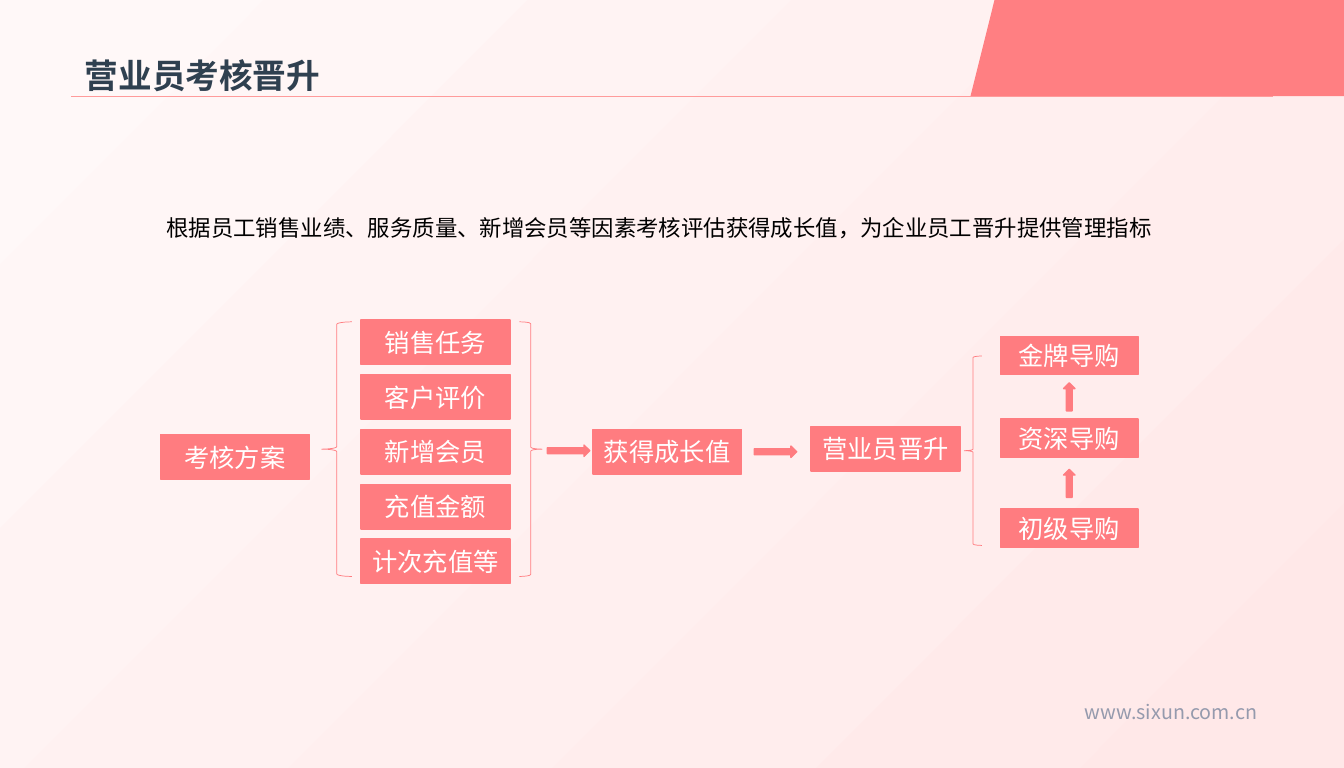
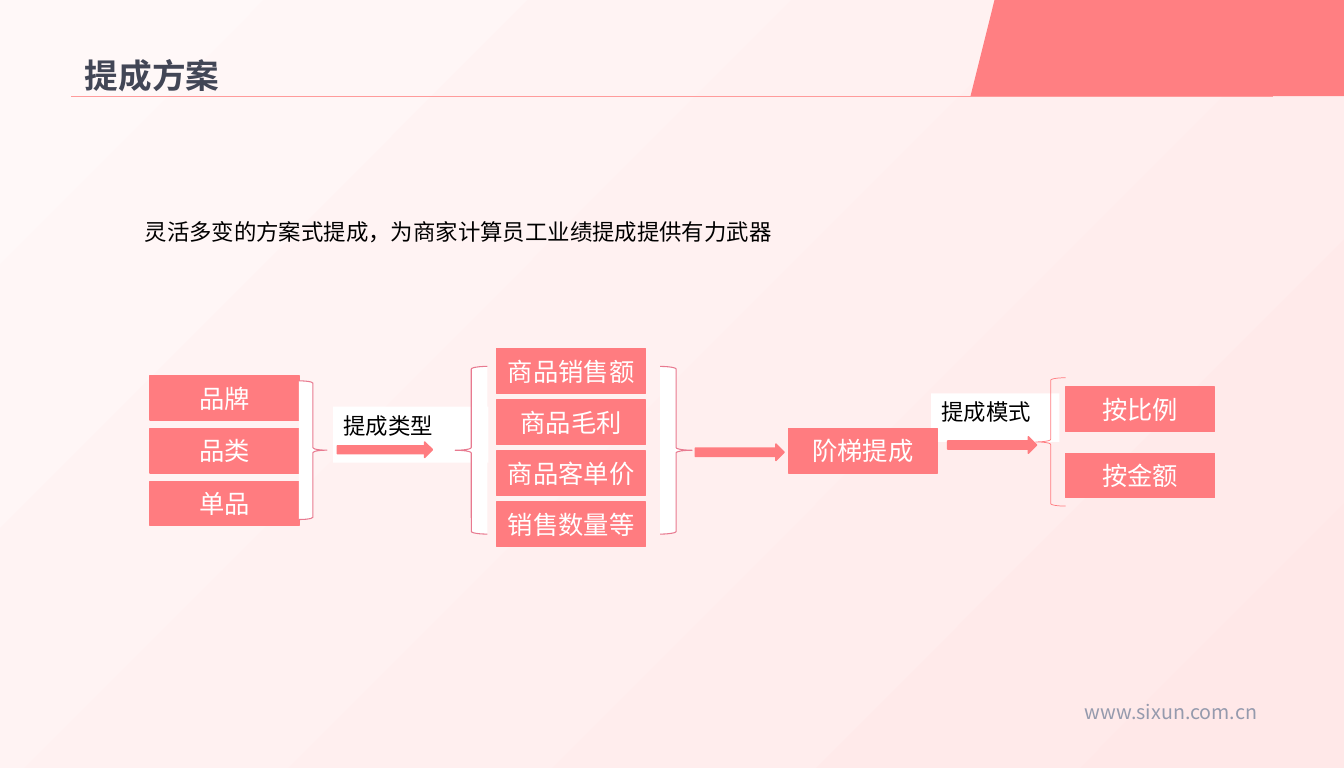
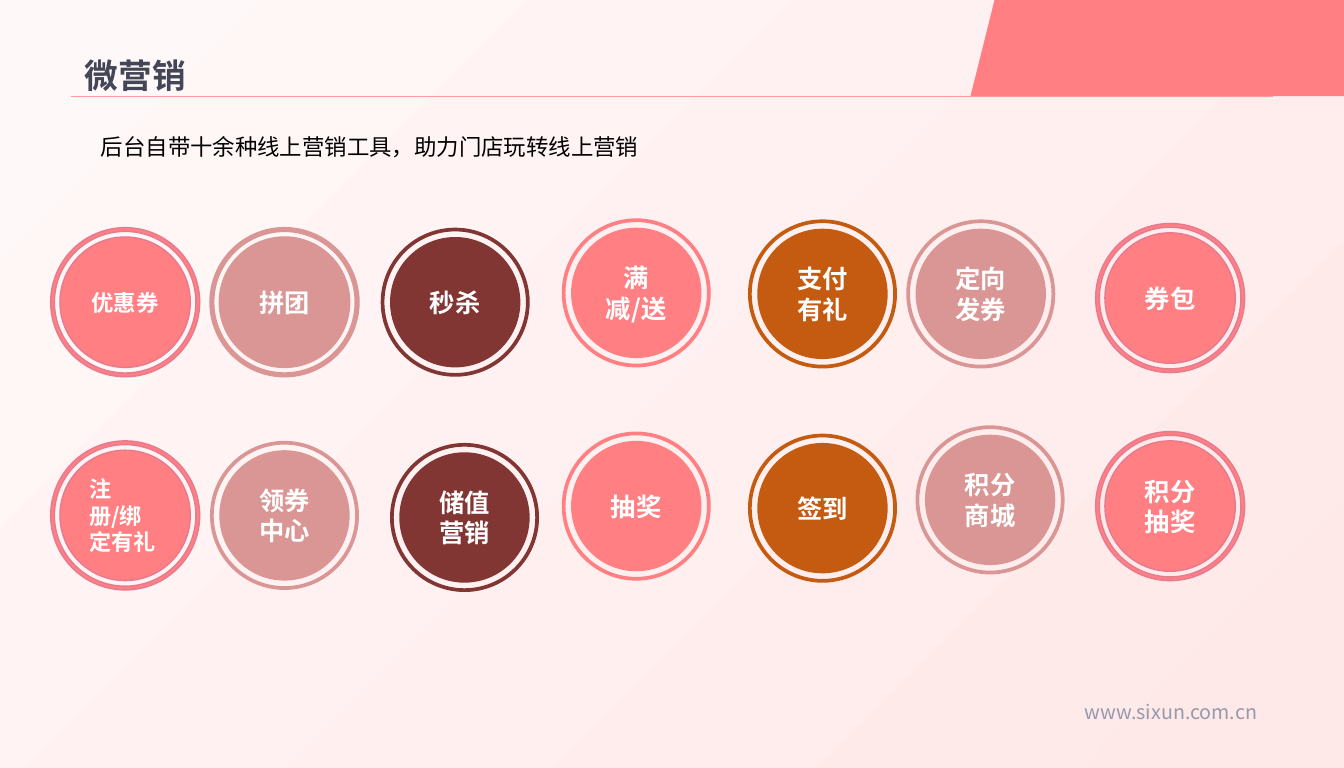
from dataclasses import dataclass

from lxml.etree import SubElement
from pptx import Presentation
from pptx.dml.color import RGBColor
from pptx.enum.lang import MSO_LANGUAGE_ID
from pptx.enum.shapes import MSO_CONNECTOR, MSO_SHAPE
from pptx.enum.text import MSO_ANCHOR, MSO_AUTO_SIZE, PP_ALIGN
from pptx.oxml.ns import qn
from pptx.util import Inches, Pt

# Shared look; every length is counted in grid units of a tenth of an inch
GRID = Inches(0.1)
PAGE_WIDTH, PAGE_HEIGHT = 129.9, 74.2
TILE_WIDTH, TILE_HEIGHT = 14.4, 4.3
HAN_FONT = "Noto Sans CJK SC"
COLORS = {
    "light": "FFF8F8", "blush": "FFE8E8", "band": "FF7F82", "rule": "FF9B9B",
    "tile": "FF7C80", "edge": "E87A90", "rose": "D99694", "wine": "823634",
    "rust": "C55A11", "navy": "2F4050", "slate": "424656", "footer": "959AAD",
    "white": "FFFFFF", "black": "000000",
}


@dataclass
class Box:
    left: float
    top: float
    width: float
    height: float

    def area(self, left, top, width=TILE_WIDTH, height=TILE_HEIGHT):
        """A box placed from this box's top left corner."""
        return Box(self.left + left, self.top + top, width, height)

    def emu(self):
        return [round(side * GRID) for side in (self.left, self.top, self.width, self.height)]


def rgb(name):
    return RGBColor.from_string(COLORS[name])


# Text and shape helpers
def write(shape, text, size, color, font=HAN_FONT, bold=False,
          align=PP_ALIGN.LEFT, anchor=MSO_ANCHOR.TOP, spacing=None):
    frame = shape.text_frame
    frame.text = text
    frame.word_wrap = True
    frame.auto_size = MSO_AUTO_SIZE.NONE
    frame.vertical_anchor = anchor
    for para in frame.paragraphs:
        para.alignment = align
        para.line_spacing = spacing
        for span in para.runs:
            span.font.size = Pt(size)
            span.font.bold = bold
            span.font.color.rgb = rgb(color)
            span.font.name = font
            span.font.language_id = MSO_LANGUAGE_ID.SIMPLIFIED_CHINESE
            SubElement(span.font._element, qn("a:ea")).set("typeface", HAN_FONT)


def add_text(page, box, text, size, color, **style):
    write(page.shapes.add_textbox(*box.emu()), text, size, color, **style)


def add_shape(owner, kind, box, fill=None, line=None, line_width=1):
    shape = owner.shapes.add_shape(kind, *box.emu())
    shape.shadow.inherit = False
    if fill:
        shape.fill.solid()
        shape.fill.fore_color.rgb = rgb(fill)
    else:
        shape.fill.background()
    if line:
        shape.line.color.rgb = rgb(line)
        shape.line.width = Pt(line_width)
    else:
        shape.line.fill.background()
    return shape


# Diagram parts
def add_tile(page, box, label):
    tile = add_shape(page, MSO_SHAPE.RECTANGLE, box, "tile", "tile")
    write(tile, label, 17.6, "white", "Cabin", align=PP_ALIGN.CENTER, anchor=MSO_ANCHOR.MIDDLE)


def add_stack(page, box, labels):
    """Tiles spread evenly from the top to the bottom of the box."""
    pitch = (box.height - TILE_HEIGHT) / (len(labels) - 1)
    for index, label in enumerate(labels):
        add_tile(page, box.area(0, index * pitch), label)


def add_ladder(page, box, steps, tile_height=3.7):
    """Tiles at given rows, with an upward arrow in the middle of each gap."""
    arrow_width, arrow_height = 1.1, 2.7
    previous_bottom = None
    for row, label in steps:
        add_tile(page, box.area(0, row, box.width, tile_height), label)
        if previous_bottom is not None:
            middle = (previous_bottom + row) / 2
            arrow = box.area((box.width - arrow_width) / 2, middle - arrow_height / 2,
                             arrow_width, arrow_height)
            add_shape(page, MSO_SHAPE.UP_ARROW, arrow, "tile", "tile")
        previous_bottom = row + tile_height


def add_arrow(page, box):
    add_shape(page, MSO_SHAPE.RIGHT_ARROW, box, "tile", "tile")


def add_brace(page, kind, box, filled=False):
    style = ("white", "edge", 0.75) if filled else (None, "tile", 0.5)
    add_shape(page, kind, box, *style)


def add_label(page, box, text):
    label = add_shape(page, MSO_SHAPE.RECTANGLE, box, "white")
    write(label, text, 15.6, "black", "Calibri", align=PP_ALIGN.JUSTIFY)


def add_badge(page, box, label, fill, edge=None, size=17.6, align=PP_ALIGN.CENTER):
    """A thin ring around a disc with a label."""
    inset = 0.9
    group = page.shapes.add_group_shape()
    ring = add_shape(group, MSO_SHAPE.DONUT, box, fill, edge)
    ring.adjustments[0] = 0.025
    disc_box = box.area(inset, inset, box.width - 2 * inset, box.height - 2 * inset)
    disc = add_shape(group, MSO_SHAPE.OVAL, disc_box, fill, edge)
    write(disc, label, size, "white", bold=True, align=align, anchor=MSO_ANCHOR.MIDDLE)


# Page frame: band, rule, footer and title
def set_background(master):
    fill = master.background.fill
    fill.gradient()
    fill.gradient_angle = 315
    for stop, name in zip(fill.gradient_stops, ("light", "blush")):
        stop.color.rgb = rgb(name)


def new_page(deck, title, title_color="slate"):
    page = deck.slides.add_slide(deck.slide_layouts[5])
    frame = Box(0, 0, PAGE_WIDTH, PAGE_HEIGHT)
    add_shape(page, MSO_SHAPE.PARALLELOGRAM, frame.area(93.8, 0, 39.1, 9.3), "band")
    add_text(page, frame.area(101, 67.1, 21.5, 3.3), "www.sixun.com.cn", 13.7, "footer",
             align=PP_ALIGN.RIGHT)
    left, top, width, _ = frame.area(6.9, 9.3, 116.1, 0).emu()
    rule = page.shapes.add_connector(MSO_CONNECTOR.STRAIGHT, left, top, left + width, top)
    rule.line.color.rgb = rgb("rule")
    rule.line.width = Pt(0.5)
    SubElement(rule._element.spPr, qn("a:effectLst"))
    heading = page.shapes.title
    heading.left, heading.top, heading.width, heading.height = frame.area(7.2, 3.4, 46.1, 6.3).emu()
    write(heading, title, 23.4, title_color, bold=True, anchor=MSO_ANCHOR.BOTTOM)
    return page


# Diagrams
def promotion_flow(page, box):
    add_tile(page, box.area(0, 11.1), "考核方案")
    add_brace(page, MSO_SHAPE.LEFT_BRACE, box.area(15.6, 0.2, 2.9, 24.6))
    add_stack(page, box.area(19.4, 0, height=box.height),
              ["销售任务", "客户评价", "新增会员", "充值金额", "计次充值等"])
    add_brace(page, MSO_SHAPE.RIGHT_BRACE, box.area(34.7, 0.2, 2.2, 24.6))
    add_arrow(page, box.area(37.4, 12.1, 4.1, 1.1))
    add_tile(page, box.area(41.8, 10.6), "获得成长值")
    add_arrow(page, box.area(57.4, 12.2, 4.1, 1.1))
    add_tile(page, box.area(62.9, 10.3), "营业员晋升")
    add_brace(page, MSO_SHAPE.LEFT_BRACE, box.area(77.7, 3.5, 1.7, 18.3))
    add_ladder(page, box.area(81.2, 1.6, 13.3, 20.4),
               [(0, "金牌导购"), (8, "资深导购"), (16.7, "初级导购")])


def commission_flow(page, box):
    add_label(page, box.area(17.7, 5.6, 15, 5.4), "提成类型")
    add_arrow(page, box.area(18.1, 9, 9.2, 1.5))
    add_label(page, box.area(75.5, 4.3, 12.4, 4.7), "提成模式")
    add_brace(page, MSO_SHAPE.LEFT_BRACE, box.area(85.6, 2.8, 2.9, 12.4))
    add_stack(page, box.area(0, 2.6, height=14.5), ["品牌", "品类", "单品"])
    add_brace(page, MSO_SHAPE.RIGHT_BRACE, box.area(14.4, 3.1, 2.7, 13.4), filled=True)
    add_brace(page, MSO_SHAPE.LEFT_BRACE, box.area(29.5, 1.7, 3.1, 16.2), filled=True)
    add_stack(page, box.area(33.5, 0, height=box.height),
              ["商品销售额", "商品毛利", "商品客单价", "销售数量等"])
    add_brace(page, MSO_SHAPE.RIGHT_BRACE, box.area(49.3, 1.7, 3.1, 16.2), filled=True)
    add_arrow(page, box.area(52.7, 9.2, 8.6, 1.6))
    add_tile(page, box.area(61.7, 7.7), "阶梯提成")
    add_arrow(page, box.area(77.1, 8.5, 8.6, 1.6))
    add_stack(page, box.area(88.5, 3.7, height=10.7), ["按比例", "按金额"])


def marketing_badges(page, box):
    diameter = 14.4
    badges = [  # left, top, label, fill, then edge, size and alignment where they differ
        (0, 0.9, "优惠券", "band", "edge", 15.6),
        (15.4, 0.9, "拼团", "rose", "rose"),
        (31.9, 0.9, "秒杀", "wine"),
        (49.4, 0, "满减/送", "band"),
        (67.4, 0.1, "支付\n有礼", "rust"),
        (82.7, 0.1, "定向发券", "rose"),
        (101, 0.5, "券包", "band", "edge"),
        (0, 21.5, "注册/绑定有礼", "band", "edge", 15.4, PP_ALIGN.LEFT),
        (15.4, 21.5, "领券中心", "rose"),
        (32.8, 21.7, "储值营销", "wine"),
        (49.4, 20.6, "抽奖", "band"),
        (67.4, 20.8, "签到", "rust"),
        (83.6, 20, "积分商城", "rose"),
        (101, 20.6, "积分抽奖", "band", "edge"),
    ]
    for left, top, *look in badges:
        add_badge(page, box.area(left, top, diameter, diameter), *look)


def main():
    deck = Presentation()
    deck.slide_width = round(PAGE_WIDTH * GRID)
    deck.slide_height = round(PAGE_HEIGHT * GRID)
    set_background(deck.slide_master)

    page = new_page(deck, "营业员考核晋升", "navy")
    promotion_flow(page, Box(15.5, 30.9, 94.5, 25.5))
    add_text(page, Box(15.1, 20.2, 100.1, 3.6),
             "根据员工销售业绩、服务质量、新增会员等因素考核评估获得成长值，为企业员工晋升提供管理指标",
             15.6, "black", font="Arial")

    page = new_page(deck, "提成方案")
    commission_flow(page, Box(14.5, 33.7, 102.9, 19.1))
    add_text(page, Box(13, 20.6, 74.6, 6.6),
             "灵活多变的方案式提成，为商家计算员工业绩提成提供有力武器",
             15.6, "black", font="Arial")

    page = new_page(deck, "微营销")
    add_text(page, Box(3.5, 11.8, 64.5, 4.2),
             "后台自带十余种线上营销工具，助力门店玩转线上营销",
             15.6, "black", align=PP_ALIGN.CENTER, spacing=1.2)
    marketing_badges(page, Box(4.9, 21.1, 115.4, 36.1))

    deck.save("out.pptx")


if __name__ == "__main__":
    main()
